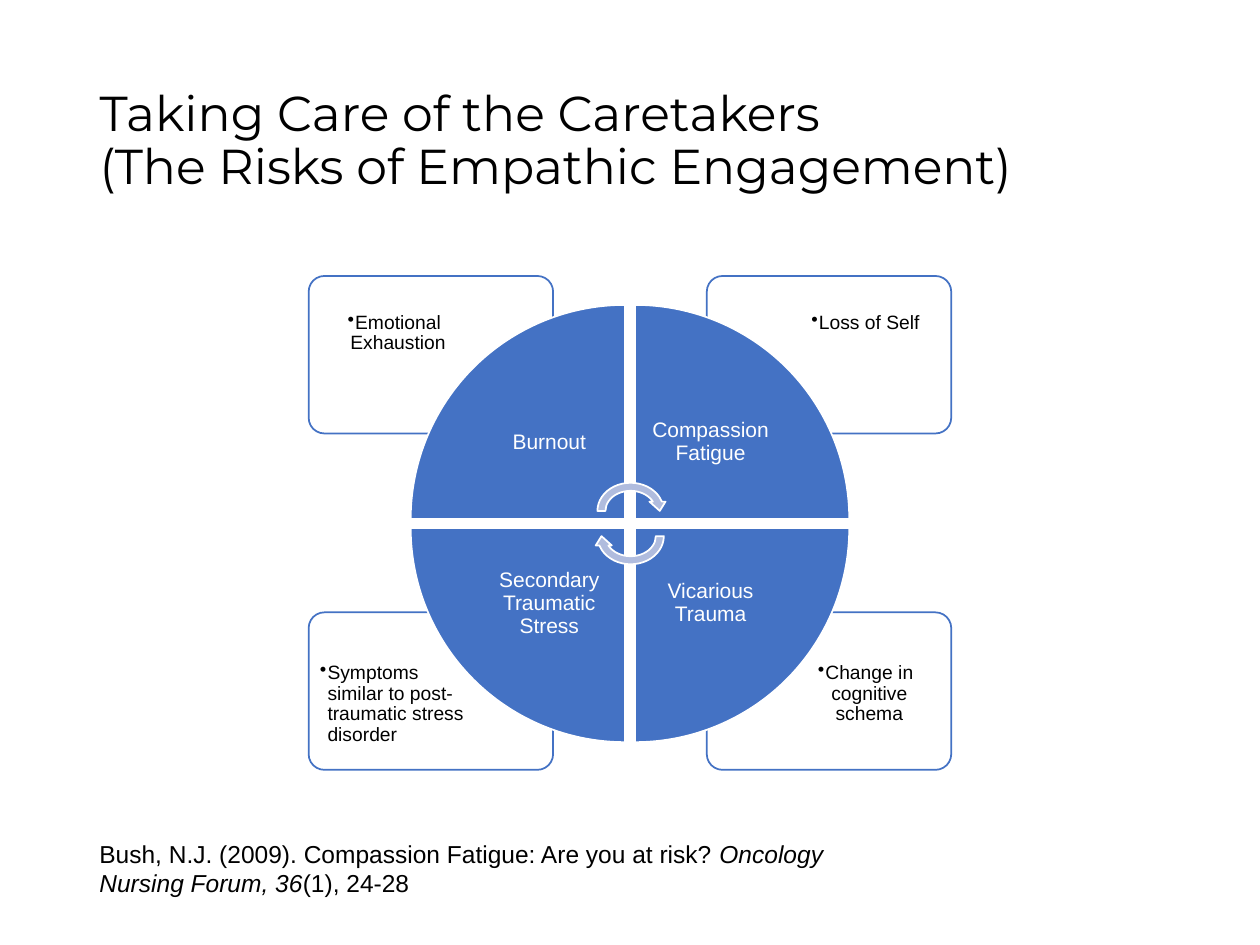
from dataclasses import dataclass

from lxml import etree
from pptx import Presentation
from pptx.dml.color import RGBColor
from pptx.enum import shapes, text
from pptx.oxml import ns
from pptx.util import Inches, Pt

BLUE, PALE, WHITE, BLACK = "4472C4", "B0BCDE", "FFFFFF", "000000"
SHAPE, ALIGN, ANCHOR = shapes.MSO_SHAPE, text.PP_ALIGN, text.MSO_ANCHOR

# Left edges by column and top edges by row
CARD_X, CARD_Y = (2.45, 5.61), (2.19, 4.86)
NOTE_X, NOTE_Y = (2.48, 6.22), (2.42, 5.2)
WEDGE_X, WEDGE_Y = (3.26, 5.04), (2.42, 4.19)
LABEL_X, LABEL_Y = (3.76, 5.04), (2.91, 4.19)


@dataclass
class Risk:
    name: str
    note: str
    col: int
    row: int
    turn: int
    align: ALIGN = ALIGN.CENTER


RISKS = [
    Risk("Burnout", "Emotional Exhaustion", 0, 0, 0),
    Risk("Compassion Fatigue", "Loss of Self", 1, 0, 90),
    Risk("Vicarious Trauma", "Change in cognitive schema", 1, 1, 180),
    Risk("Secondary Traumatic Stress",
         "Symptoms similar to post-traumatic stress disorder",
         0, 1, 270, ALIGN.LEFT),
]


def paint(fmt, hue: str) -> None:
    """Give a fill solid colour."""
    fmt.solid()
    fmt.fore_color.rgb = RGBColor.from_string(hue)


def style(font, name: str, size: float, hue: str) -> None:
    font.name, font.size = name, Pt(size)
    font.color.rgb = RGBColor.from_string(hue)


def draw(slide, kind, box: tuple, fill: str, line: str, turn: int = 0):
    """Draw a filled, outlined shape."""
    shape = slide.shapes.add_shape(kind, *map(Inches, box))
    shape.shadow.inherit = False
    shape.rotation = turn
    paint(shape.fill, fill)
    paint(shape.line.fill, line)
    shape.line.width = Pt(1)
    return shape


def write(slide, words: str, box: tuple, size: float, hue: str, inset: float,
          align=ALIGN.CENTER, anchor=ANCHOR.TOP, bullet: bool = False) -> None:
    """Write one diagram paragraph in a text box."""
    frame = slide.shapes.add_textbox(*map(Inches, box)).text_frame
    frame.word_wrap = True
    frame.vertical_anchor = anchor
    frame.margin_left = frame.margin_right = Inches(inset)
    frame.margin_top = frame.margin_bottom = Inches(inset)
    frame.text = words
    para = frame.paragraphs[0]
    para.alignment, para.line_spacing = align, 0.9
    if bullet:
        props = para._p.get_or_add_pPr()
        props.set("marL", str(Inches(0.06)))
        props.set("indent", str(-Inches(0.06)))
        etree.SubElement(props, ns.qn("a:buChar")).set("char", "•")
    style(para.runs[0].font, "Arial", size, hue)


def card(slide, risk: Risk) -> None:
    """Draw the outer card with its bulleted note."""
    box = (CARD_X[risk.col], CARD_Y[risk.row], 1.94, 1.25)
    shape = draw(slide, SHAPE.ROUNDED_RECTANGLE, box, WHITE, BLUE)
    shape.adjustments[0] = 0.1
    tint = shape.fill._xPr.find(".//" + ns.qn("a:srgbClr"))
    etree.SubElement(tint, ns.qn("a:alpha")).set("val", "90000")
    box = (NOTE_X[risk.col], NOTE_Y[risk.row], 1.3, 0.89)
    write(slide, risk.note, box, 11, BLACK, 0.06, risk.align, bullet=True)


def wedge(slide, risk: Risk) -> None:
    """Draw a quarter of the circle with its name."""
    box = (WEDGE_X[risk.col], WEDGE_Y[risk.row], 1.7, 1.7)
    draw(slide, SHAPE.PIE_WEDGE, box, BLUE, WHITE, risk.turn)
    box = (LABEL_X[risk.col], LABEL_Y[risk.row], 1.2, 1.2)
    write(slide, risk.name, box, 12, WHITE, 0.09, anchor=ANCHOR.MIDDLE)


def head(slide) -> None:
    title = slide.shapes.title
    title.left, title.top = Inches(0.69), Inches(0.4)
    title.width, title.height = Inches(8.62), Inches(1.45)
    frame = title.text_frame
    frame.text = "Taking Care of the Caretakers\v(The Risks of Empathic Engagement)"
    frame.auto_size = text.MSO_AUTO_SIZE.NONE
    frame.vertical_anchor = ANCHOR.MIDDLE
    para = frame.paragraphs[0]
    para.alignment, para.line_spacing = ALIGN.LEFT, 0.9
    for run in para.runs:
        style(run.font, "Montserrat", 28, BLACK)


def cite(slide) -> None:
    box = map(Inches, (0.69, 6.61, 6.55, 0.57))
    frame = slide.shapes.add_textbox(*box).text_frame
    frame.word_wrap = True
    parts = [
        ("Bush, N.J. (2009). Compassion Fatigue: Are you at risk?", False),
        (" Oncology Nursing Forum, 36", True),
        ("(1), 24-28", False),
    ]
    for words, slant in parts:
        run = frame.paragraphs[0].add_run()
        run.text = words
        style(run.font, "Arial", 14, BLACK)
        run.font.italic = slant


def main() -> None:
    deck = Presentation()
    deck.slide_width, deck.slide_height = Inches(10), Inches(7.5)
    slide = deck.slides.add_slide(deck.slide_layouts[5])
    head(slide)

    # Cards lie behind the circle
    for risk in RISKS:
        card(slide, risk)
    for risk in RISKS:
        wedge(slide, risk)

    # Cycle arrows at the centre
    for top, turn in ((3.8, 0), (4, 180)):
        draw(slide, SHAPE.CIRCULAR_ARROW, (4.71, top, 0.59, 0.51),
             PALE, WHITE, turn)

    cite(slide)
    deck.save("out.pptx")


if __name__ == "__main__":
    main()
